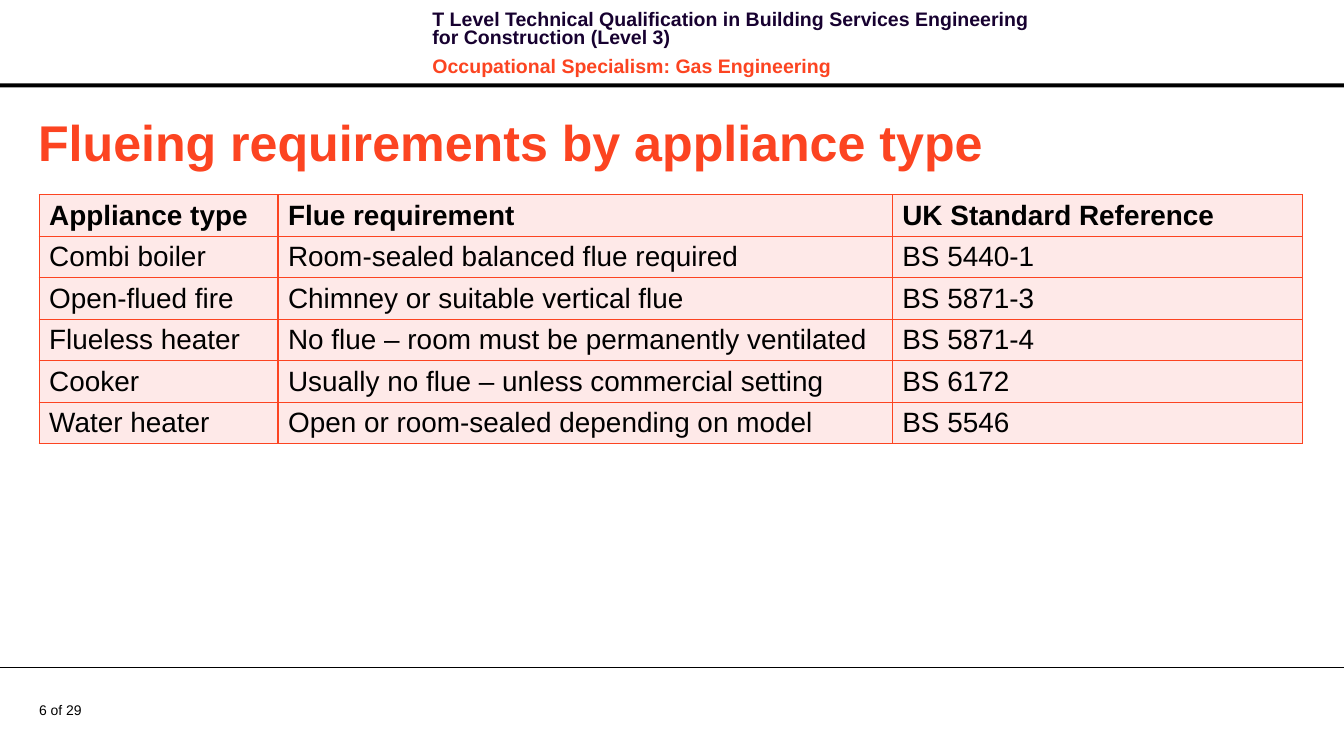
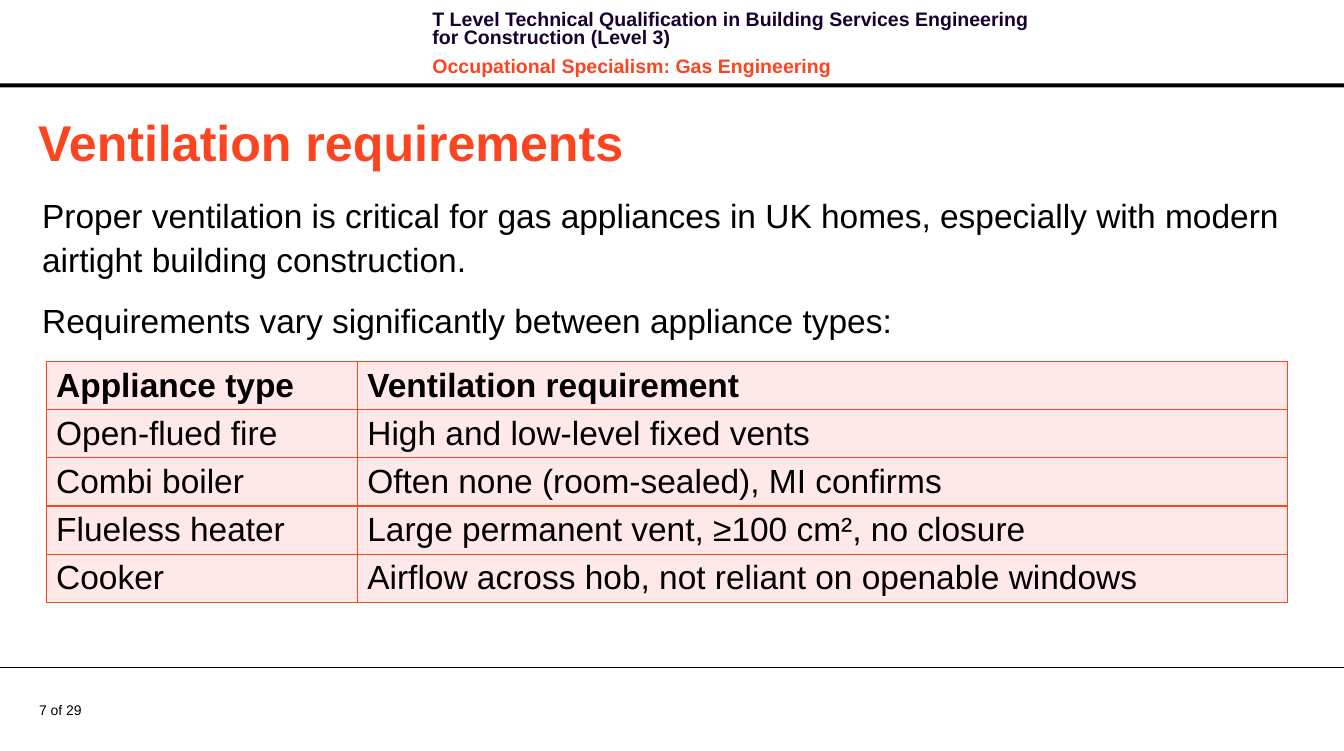
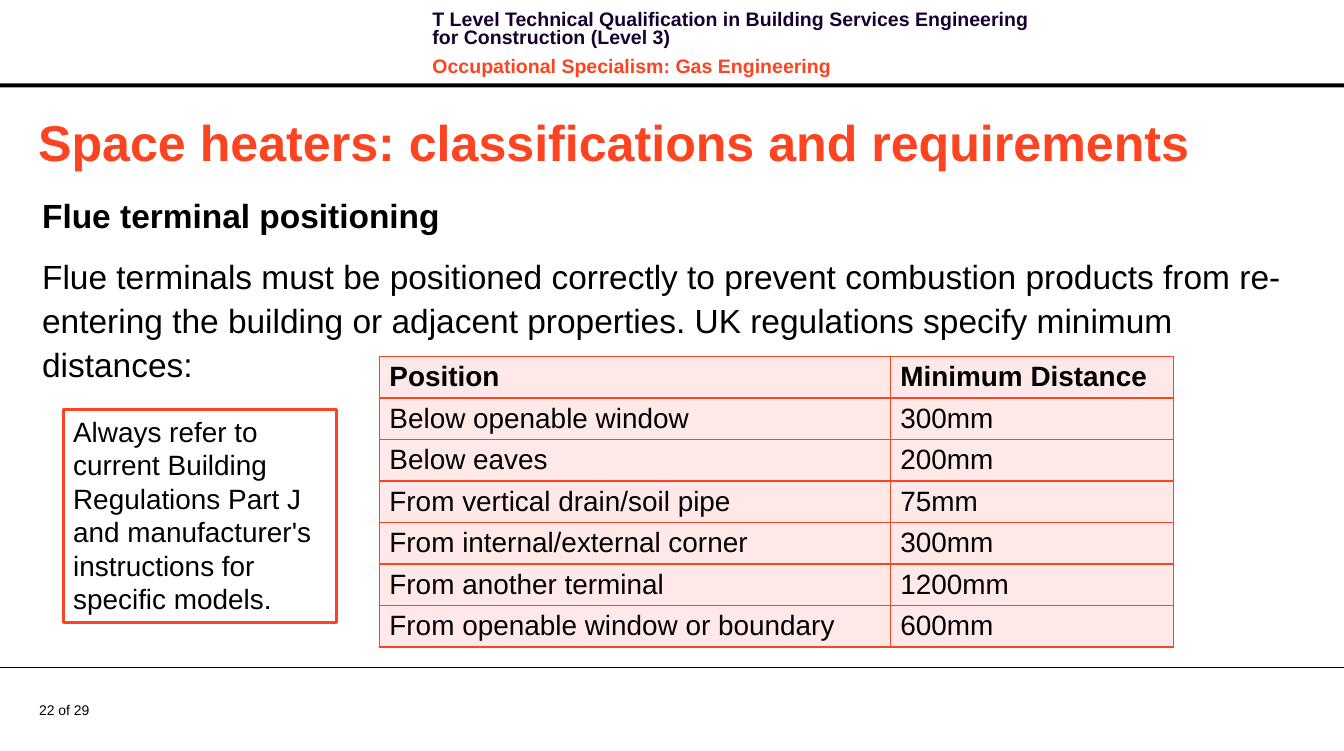
from lxml import etree
from pptx import Presentation
from pptx import util as u
from pptx.dml.color import RGBColor
from pptx.enum import shapes, text
from pptx.oxml.ns import qn

PX = 9144
WIDE, HIGH = 1339, 748
FONT = "Arial"
HUES = {"red": "FC4421", "navy": "170130", "ink": "000000",
        "pink": "FEE9E8", "white": "FFFFFF"}
ROWS = {20: 41, 24: 47}
TOTAL = 29
HEAD = [
    ("T Level Technical Qualification in Building Services Engineering "
     "for Construction (Level 3)", "navy"),
    ("Occupational Specialism: Gas Engineering", "red"),
]
SLIDES = [
    {
        "page": 6,
        "title": "Flueing requirements by appliance type",
        "table": {"at": (39, 194), "cols": (238, 612, 409), "size": 20, "rows": [
            ("Appliance type", "Flue requirement", "UK Standard Reference"),
            ("Combi boiler", "Room-sealed balanced flue required", "BS 5440-1"),
            ("Open-flued fire", "Chimney or suitable vertical flue", "BS 5871-3"),
            ("Flueless heater", "No flue – room must be permanently ventilated",
             "BS 5871-4"),
            ("Cooker", "Usually no flue – unless commercial setting", "BS 6172"),
            ("Water heater", "Open or room-sealed depending on model", "BS 5546"),
        ]},
    },
    {
        "page": 7,
        "title": "Ventilation requirements",
        "body": [
            ("Proper ventilation is critical for gas appliances in UK homes, "
             "especially with modern airtight building construction.", False),
            ("Requirements vary significantly between appliance types:", False),
        ],
        "table": {"at": (46, 360), "cols": (310, 927), "size": 24, "rows": [
            ("Appliance type", "Ventilation requirement"),
            ("Open-flued fire", "High and low-level fixed vents"),
            ("Combi boiler", "Often none (room-sealed), MI confirms"),
            ("Flueless heater", "Large permanent vent, ≥100 cm², no closure"),
            ("Cooker", "Airflow across hob, not reliant on openable windows"),
        ]},
    },
    {
        "page": 22,
        "title": "Space heaters: classifications and requirements",
        "body": [
            ("Flue terminal positioning", True),
            ("Flue terminals must be positioned correctly to prevent combustion "
             "products from re-entering the building or adjacent properties. "
             "UK regulations specify minimum distances:", False),
        ],
        "table": {"at": (378, 355), "cols": (509, 282), "size": 20, "rows": [
            ("Position", "Minimum Distance"),
            ("Below openable window", "300mm"),
            ("Below eaves", "200mm"),
            ("From vertical drain/soil pipe", "75mm"),
            ("From internal/external corner", "300mm"),
            ("From another terminal", "1200mm"),
            ("From openable window or boundary", "600mm"),
        ]},
        "note": "Always refer to current Building Regulations Part J and "
                "manufacturer's instructions for specific models.",
    },
]


def px(*vals):
    return [u.Emu(v * PX) for v in vals]


def rgb(hue):
    return RGBColor.from_string(HUES[hue])


def style(para, size, hue="ink", bold=False):
    para.alignment = text.PP_ALIGN.LEFT
    for run in para.runs:
        font = run.font
        font.name, font.size, font.bold = FONT, u.Pt(size), bold
        font.color.rgb = rgb(hue)


def box(slide, at, inset=0):
    frame = slide.shapes.add_textbox(*px(*at)).text_frame
    frame.word_wrap = True
    frame.margin_left = frame.margin_right = u.Emu(inset * 2 * PX)
    frame.margin_top = frame.margin_bottom = u.Emu(inset * PX)
    return frame


def fill(frame, items, size, line, before=0, after=0):
    for i, (words, hue, bold) in enumerate(items):
        para = frame.add_paragraph() if i else frame.paragraphs[0]
        para.text = words
        para.line_spacing = line
        para.space_before = u.Pt(before if i else 0)
        para.space_after = u.Pt(after)
        style(para, size, hue, bold)


def frame_up(slide, page):
    band = slide.shapes.add_shape(shapes.MSO_SHAPE.RECTANGLE, *px(0, 83, WIDE, 4))
    band.shadow.inherit = False
    band.fill.solid()
    band.fill.fore_color.rgb = rgb("ink")
    band.line.fill.background()

    rule = slide.shapes.add_connector(
        shapes.MSO_CONNECTOR.STRAIGHT, *px(0, 665, WIDE, 665))
    rule.line.color.rgb = rgb("ink")
    rule.line.width = u.Pt(0.75)
    etree.SubElement(rule._element.spPr, qn("a:effectLst"))

    head = box(slide, (421, 7, 637, 64), 5)
    fill(head, [(words, hue, True) for words, hue in HEAD],
         14, u.Pt(13.1), 4, 4)

    foot = box(slide, (39, 699, 64, 17))
    foot.vertical_anchor = text.MSO_ANCHOR.MIDDLE
    fill(foot, [(f"{page} of {TOTAL}", "ink", False)], 10, 1.0)


def add_title(slide, words):
    title = slide.shapes.title
    title.left, title.top, title.width, title.height = px(28, 105, 1272, 71)
    frame = title.text_frame
    frame.text = words
    frame.auto_size = text.MSO_AUTO_SIZE.NONE
    frame.vertical_anchor = text.MSO_ANCHOR.MIDDLE
    style(frame.paragraphs[0], 36, "red", True)


def edge(cell):
    props = cell._tc.get_or_add_tcPr()
    for i, side in enumerate(("lnL", "lnR", "lnT", "lnB")):
        line = etree.Element(qn(f"a:{side}"), w=str(u.Pt(1)))
        paint = etree.SubElement(line, qn("a:solidFill"))
        etree.SubElement(paint, qn("a:srgbClr"), val=HUES["red"])
        props.insert(i, line)


def add_grid(slide, at, cols, size, rows):
    high = ROWS[size]
    area = px(*at, sum(cols), high * len(rows))
    grid = slide.shapes.add_table(len(rows), len(cols), *area).table
    for col, wide in zip(grid.columns, px(*cols)):
        col.width = wide
    for r, row in enumerate(rows):
        grid.rows[r].height = u.Emu(high * PX)
        for c, words in enumerate(row):
            cell = grid.cell(r, c)
            cell.text = words
            cell.margin_top = cell.margin_bottom = u.Emu(4 * PX)
            cell.vertical_anchor = text.MSO_ANCHOR.MIDDLE
            cell.fill.solid()
            cell.fill.fore_color.rgb = rgb("pink")
            edge(cell)
            style(cell.text_frame.paragraphs[0], size, bold=r == 0)


def add_note(slide, words):
    note = slide.shapes.add_shape(
        shapes.MSO_SHAPE.RECTANGLE, *px(63, 408, 272, 212))
    note.shadow.inherit = False
    note.fill.solid()
    note.fill.fore_color.rgb = rgb("white")
    note.line.color.rgb = rgb("red")
    note.line.width = u.Pt(2)
    frame = note.text_frame
    frame.word_wrap = True
    frame.vertical_anchor = text.MSO_ANCHOR.TOP
    frame.text = words
    style(frame.paragraphs[0], 20)


def main():
    deck = Presentation()
    deck.slide_width, deck.slide_height = px(WIDE, HIGH)
    for data in SLIDES:
        slide = deck.slides.add_slide(deck.slide_layouts[5])
        frame_up(slide, data["page"])
        add_title(slide, data["title"])
        if "body" in data:
            body = box(slide, (42, 190, 1260, 453))
            fill(body, [(words, "ink", bold) for words, bold in data["body"]],
                 24, 1.1, after=12)
        add_grid(slide, **data["table"])
        if "note" in data:
            add_note(slide, data["note"])
    deck.save("out.pptx")


if __name__ == "__main__":
    main()
